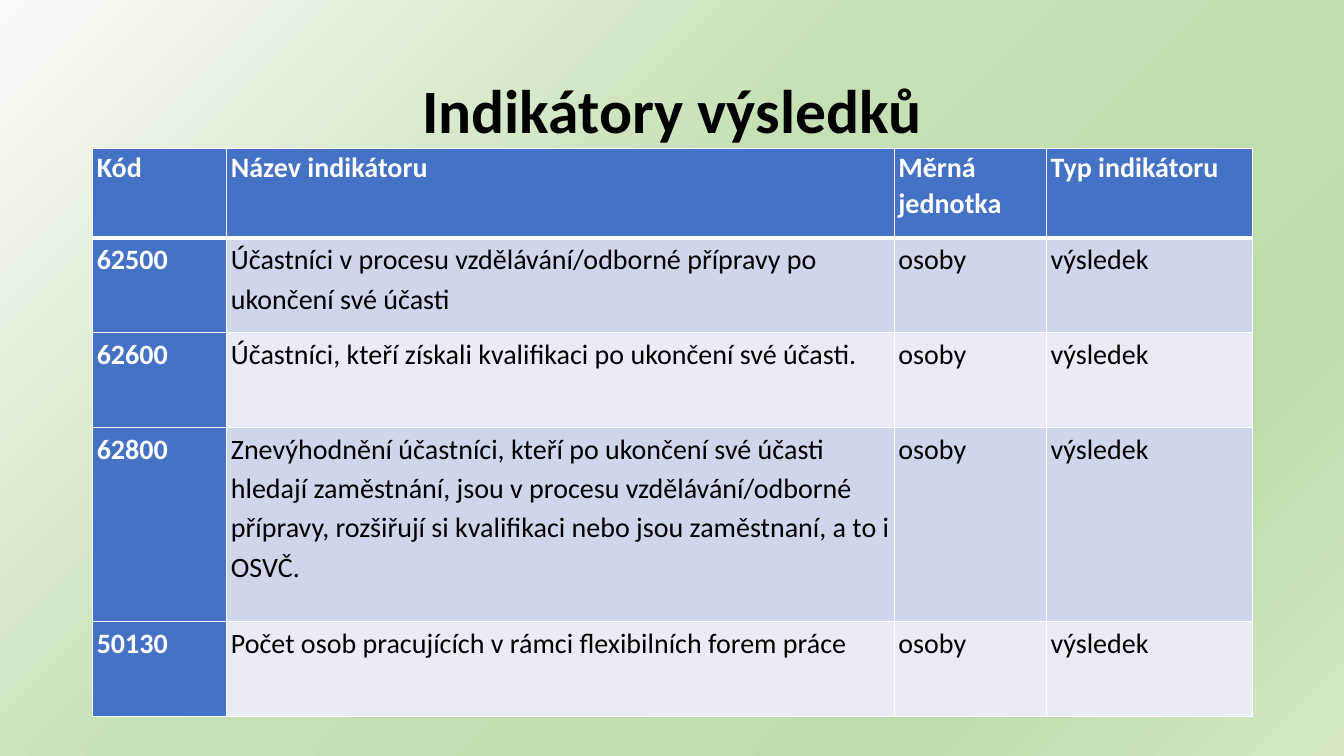
from pptx import Presentation
from pptx.dml.color import RGBColor
from pptx.enum.text import MSO_ANCHOR, PP_ALIGN
from pptx.oxml.ns import qn
from pptx.util import Inches, Pt
from lxml.etree import SubElement

TITLE = "Indikátory výsledků"
HEADER = ("Kód", "Název indikátoru", "Měrná jednotka", "Typ indikátoru")
INDICATORS = [
    ("62500", "Účastníci v procesu vzdělávání/odborné přípravy po ukončení své účasti"),
    ("62600", "Účastníci, kteří získali kvalifikaci po ukončení své účasti."),
    ("62800", "Znevýhodnění účastníci, kteří po ukončení své účasti hledají zaměstnání, "
              "jsou v procesu vzdělávání/odborné přípravy, rozšiřují si kvalifikaci "
              "nebo jsou zaměstnaní, a to i OSVČ."),
    ("50130", "Počet osob pracujících v rámci flexibilních forem práce"),
]
UNIT, KIND = "osoby", "výsledek"
COLUMN_WIDTHS = (1.33, 6.62, 1.51, 2.04)
ROW_HEIGHTS = (0.89, 0.94, 0.94, 1.93, 0.94)
LEFT, WIDTH = 0.92, 11.5
TABLE_TOP = 1.47
GRADIENT = [(0, "F8FBF6"), (44, "C5E0B4"), (79, "BEDCAA"), (100, "D4E8C6")]
GRADIENT_ANGLE = 45
FONT = "Calibri"
BLACK = RGBColor(0x00, 0x00, 0x00)
WHITE = RGBColor(0xFF, 0xFF, 0xFF)
BLUE = RGBColor(0x44, 0x72, 0xC4)
BANDS = (RGBColor(0xCF, 0xD5, 0xEA), RGBColor(0xE9, 0xEB, 0xF5))


def set_font(paragraph, size, color, bold):
    font = paragraph.font
    font.name, font.size, font.bold = FONT, Pt(size), bold
    font.color.rgb = color


def paint_background(slide):
    slide.background.fill.gradient()
    gradient = slide.element.find(".//" + qn("a:gradFill"))
    stops = gradient.find(qn("a:gsLst"))
    for stop in list(stops):
        stops.remove(stop)
    for position, color in GRADIENT:
        stop = SubElement(stops, qn("a:gs"), pos=str(position * 1000))
        SubElement(stop, qn("a:srgbClr"), val=color)
    gradient.find(qn("a:lin")).set("ang", str(GRADIENT_ANGLE * 60000))


def add_title(slide):
    box = slide.shapes.add_textbox(Inches(LEFT), Inches(0.4), Inches(WIDTH), Inches(1.45))
    frame = box.text_frame
    frame.word_wrap = True
    frame.vertical_anchor = MSO_ANCHOR.MIDDLE
    paragraph = frame.paragraphs[0]
    paragraph.text = TITLE
    paragraph.alignment = PP_ALIGN.CENTER
    paragraph.line_spacing = 0.9
    set_font(paragraph, 44, BLACK, True)


def draw_borders(cell, widths):
    properties = cell._tc.get_or_add_tcPr()
    for side, width in widths.items():
        line = SubElement(properties, qn("a:ln" + side), w=str(Pt(width)))
        fill = SubElement(line, qn("a:solidFill"))
        SubElement(fill, qn("a:srgbClr"), val=str(WHITE))


def fill_cell(cell, text, row, column):
    strong = row == 0 or column == 0
    cell.margin_left = cell.margin_right = cell.margin_top = cell.margin_bottom = 0
    draw_borders(cell, {"L": 1, "R": 1, "T": 3 if row == 1 else 1, "B": 3 if row == 0 else 1})
    cell.fill.solid()
    cell.fill.fore_color.rgb = BLUE if strong else BANDS[(row - 1) % 2]
    paragraph = cell.text_frame.paragraphs[0]
    paragraph.text = text
    paragraph.line_spacing = 1.07 if row == 0 else 1.15
    paragraph.space_before = paragraph.space_after = Pt(3)
    paragraph._p.get_or_add_pPr().set("marL", str(Inches(0.04)))
    set_font(paragraph, 20, WHITE if strong else BLACK, strong)


def add_indicator_table(slide):
    rows = [HEADER] + [(code, name, UNIT, KIND) for code, name in INDICATORS]
    table = slide.shapes.add_table(
        len(rows), len(HEADER), Inches(LEFT), Inches(TABLE_TOP),
        Inches(WIDTH), Inches(sum(ROW_HEIGHTS))).table
    for column, width in zip(table.columns, COLUMN_WIDTHS):
        column.width = Inches(width)
    for row, height in zip(table.rows, ROW_HEIGHTS):
        row.height = Inches(height)
    for row, texts in enumerate(rows):
        for column, text in enumerate(texts):
            fill_cell(table.cell(row, column), text, row, column)


def main():
    presentation = Presentation()
    presentation.slide_width, presentation.slide_height = Inches(13.33), Inches(7.5)
    slide = presentation.slides.add_slide(presentation.slide_layouts[6])
    paint_background(slide)
    add_title(slide)
    add_indicator_table(slide)
    presentation.save("out.pptx")


if __name__ == "__main__":
    main()
